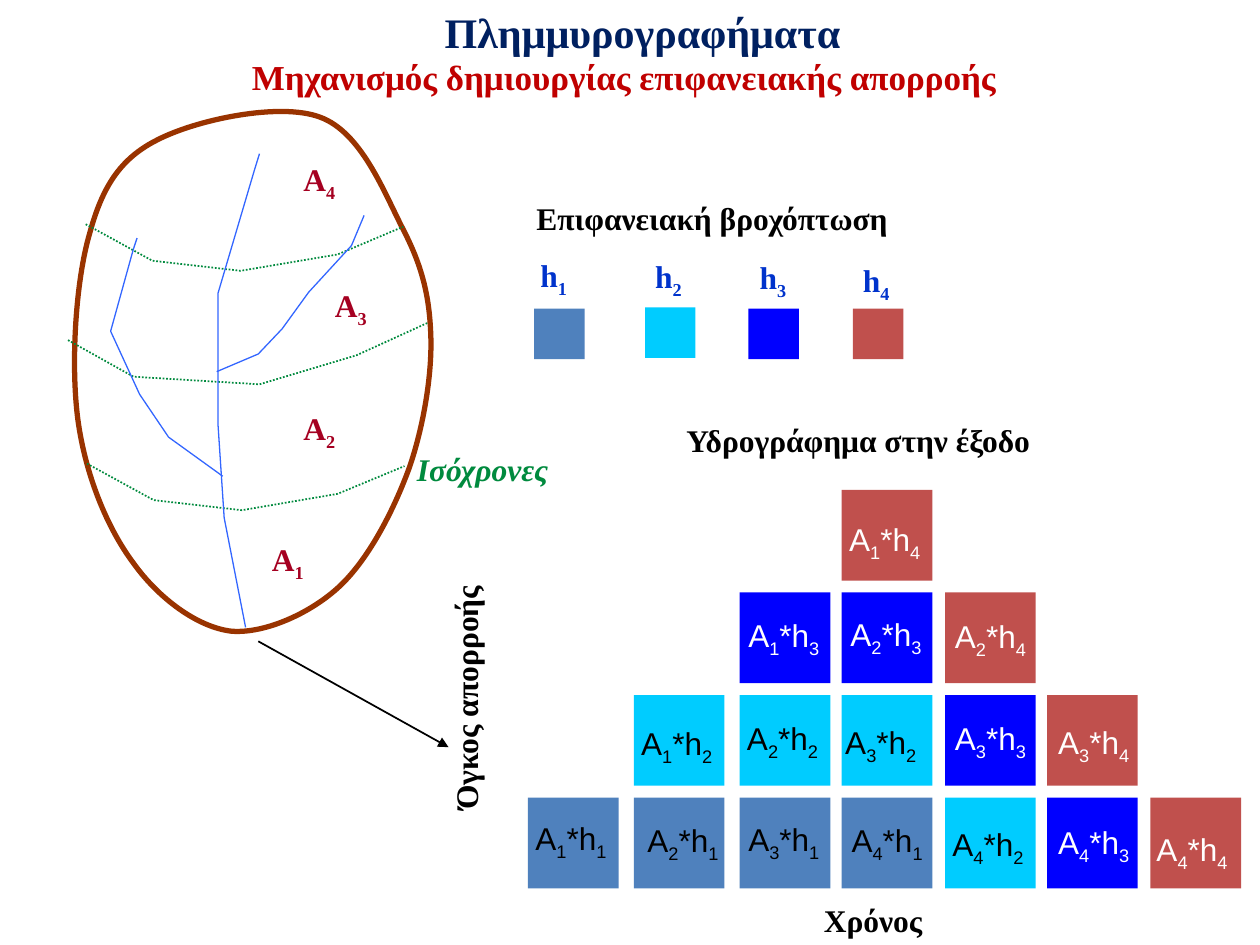
from dataclasses import dataclass
from itertools import groupby
from math import cos, radians, sin

from lxml.etree import SubElement
from pptx import Presentation
from pptx.dml.color import RGBColor
from pptx.enum.dml import MSO_LINE
from pptx.enum.shapes import MSO_CONNECTOR, MSO_SHAPE
from pptx.enum.text import MSO_ANCHOR, MSO_AUTO_SIZE, PP_ALIGN
from pptx.oxml.ns import qn
from pptx.util import Inches, Pt

BLACK = RGBColor(0, 0, 0)
WHITE = RGBColor(255, 255, 255)
STEEL = RGBColor(0x4F, 0x81, 0xBD)
CYAN = RGBColor(0, 0xCC, 0xFF)
BLUE = RGBColor(0, 0, 0xFF)
BRICK = RGBColor(0xC0, 0x50, 0x4D)
BROWN = RGBColor(0x99, 0x33, 0)
GREEN = RGBColor(0, 0x8A, 0x3E)
RIVER = RGBColor(0x33, 0x66, 0xFF)
WINE = RGBColor(0xA5, 0, 0x21)
ROYAL = RGBColor(0, 0x33, 0xCC)
NAVY = RGBColor(0, 0x20, 0x60)
RED = RGBColor(0xC0, 0, 0)
SERIF, SANS = "Times New Roman", "Arial"

WIDE, HIGH = Inches(10), Inches(7.5)
UNIT = WIDE // 1000
TILE, CHIP = 72, 40
COLS = (419, 503, 587, 668, 750, 831, 913)
BASE, STEP = 633, 81.4
RAIN = (STEEL, CYAN, BLUE, BRICK)
INKS = (BLACK, BLACK, WHITE, WHITE)


@dataclass
class Label:
    text: str
    x: float
    y: float
    w: float
    h: float = 40
    ink: RGBColor = BLACK
    face: str = SERIF
    size: int = 18
    bold: bool = True
    slant: bool = False
    turn: float = 0
    subs: bool = False
    wrap: bool = False


@dataclass
class Trace:
    dots: tuple
    ink: RGBColor
    width: float
    dash: bool = False
    curve: bool = False
    turn: float = 0
    hub: tuple = (0, 0)


OUTLINE = Trace((
    (184, 501), (157, 498), (126, 475), (106, 447), (85, 419), (68, 377), (62, 334),
    (56, 290), (60, 224), (71, 186), (81, 149), (95, 126), (125, 111),
    (156, 95), (222, 81), (254, 93), (287, 105), (305, 153), (320, 182),
    (335, 211), (341, 235), (342, 267), (343, 298), (336, 339), (325, 371),
    (313, 404), (294, 441), (272, 463), (250, 485), (212, 503), (184, 501),
), BROWN, 3, curve=True)
TRACES = (
    OUTLINE,
    Trace(((68, 178), (121, 207), (191, 215), (268, 202), (320, 180)), GREEN, 1, True),
    Trace(((54, 270), (106, 299), (206, 305), (283, 282), (340, 256)), GREEN, 1, True),
    Trace(((69, 368), (122, 397), (192, 405), (268, 392), (321, 370)), GREEN, 1, True),
    Trace(((195, 498), (178, 411), (173, 336), (173, 233), (202, 135), (206, 122)),
          RIVER, 0.75),
    Trace(((172, 295), (205, 281), (224, 261), (245, 232), (279, 195), (289, 171)),
          RIVER, 0.75),
    Trace(((177, 378), (134, 347), (111, 313), (88, 263), (106, 198), (109, 189)),
          RIVER, 0.75, turn=335.4, hub=(128, 290)),
)
CELLS = (
    ((415, 645), (499, 570), (584, 484), (664, 408)),
    ((504, 647), (583, 566), (665, 483), (748, 485)),
    ((584, 646), (661, 569), (748, 566), (830, 569)),
    ((666, 647), (746, 650), (830, 648), (908, 654)),
)
AREAS = ((206, 424), (231, 320), (256, 222), (231, 122))
CHIPS = ((424, 245), (512, 244), (594, 245), (677, 245))
DEPTHS = ((419, 198), (510, 199), (593, 200), (675, 202))
TITLES = (
    Label("Χρόνος", 644, 710, 98),
    Label("Όγκος απορροής", 270, 533, 199, turn=270),
    Label("Επιφανειακή βροχόπτωση", 416, 153, 300),
    Label("Υδρογράφημα στην έξοδο", 535, 329, 314, 43),
    Label("Μηχανισμός δημιουργίας επιφανειακής απορροής", 190, 39, 617, 44, RED, size=20),
    Label("Ισόχρονες", 321, 352, 127, ink=GREEN, slant=True),
    Label("Πλημμυρογραφήματα", 32, 0, 956, 50, NAVY, size=24, wrap=True),
)


def grid(*spans: float) -> list[int]:
    return [round(span * UNIT) for span in spans]


def square(shapes, x: float, y: float, side: float, ink: RGBColor) -> None:
    box = shapes.add_shape(MSO_SHAPE.RECTANGLE, *grid(x, y, side, side))
    box.shadow.inherit = False
    box.fill.solid()
    box.fill.fore_color.rgb = ink
    box.line.fill.background()


def write(shapes, label: Label) -> None:
    box = shapes.add_textbox(*grid(label.x, label.y, label.w, label.h))
    box.rotation = label.turn
    frame = box.text_frame
    frame.word_wrap = label.wrap
    frame.auto_size = MSO_AUTO_SIZE.SHAPE_TO_FIT_TEXT
    para = frame.paragraphs[0]
    if label.wrap:
        frame.vertical_anchor = MSO_ANCHOR.MIDDLE
        para.alignment = PP_ALIGN.CENTER
    font = para.font
    font.name, font.size = label.face, Pt(label.size)
    font.bold, font.italic = label.bold, label.slant
    font.color.rgb = label.ink
    for low, part in groupby(label.text, str.isdigit):
        run = para.add_run()
        run.text = "".join(part)
        if low and label.subs:
            run._r.get_or_add_rPr().set("baseline", "-25000")


def spin(dot: tuple, hub: tuple, turn: float) -> tuple:
    x, y = dot[0] - hub[0], dot[1] - hub[1]
    c, s = cos(radians(turn)), sin(radians(turn))
    return hub[0] + x * c - y * s, hub[1] + x * s + y * c


def bend(shape) -> None:
    lines = list(shape._element.iter(qn("a:lnTo")))
    for i in range(0, len(lines), 3):
        lines[i].tag = qn("a:cubicBezTo")
        for line in lines[i + 1:i + 3]:
            lines[i].append(line[0])
            line.getparent().remove(line)


def draw(shapes, trace: Trace) -> None:
    dots = [grid(*spin(dot, trace.hub, -trace.turn)) for dot in trace.dots]
    pen = shapes.build_freeform(*dots[0])
    pen.add_line_segments(dots[1:], close=trace.curve)
    shape = pen.convert_to_shape()
    shape.shadow.inherit = False
    shape.rotation = trace.turn
    shape.fill.background()
    shape.line.color.rgb = trace.ink
    shape.line.width = Pt(trace.width)
    if trace.dash:
        shape.line.dash_style = MSO_LINE.ROUND_DOT
    if trace.curve:
        bend(shape)


def arrow(shapes, *ends: float) -> None:
    link = shapes.add_connector(MSO_CONNECTOR.STRAIGHT, *grid(*ends))
    link.line.color.rgb = BLACK
    link.line.width = Pt(1)
    SubElement(link.line._get_or_add_ln(), qn("a:tailEnd"), type="triangle")
    SubElement(link._element.spPr, qn("a:effectLst"))


def main() -> None:
    deck = Presentation()
    deck.slide_width, deck.slide_height = WIDE, HIGH
    shapes = deck.slides.add_slide(deck.slide_layouts[6]).shapes
    basin = shapes.add_group_shape().shapes
    for trace in TRACES:
        draw(basin, trace)
    for i, (spot, chip, ink) in enumerate(zip(DEPTHS, CHIPS, RAIN), 1):
        square(shapes, *chip, CHIP, ink)
        write(shapes, Label(f"h{i}", *spot, 45, 43, ROYAL, subs=True))
    for i, spot in enumerate(AREAS, 1):
        write(shapes, Label(f"A{i}", *spot, 49, 43, WINE, subs=True))
    for a, spots in enumerate(CELLS):
        for h, spot in enumerate(spots):
            row = min(h, 3 - a)
            square(shapes, COLS[a + h], BASE - STEP * row, TILE, RAIN[h])
            write(shapes, Label(f"A{a + 1}*h{h + 1}", *spot, 79, ink=INKS[h],
                                face=SANS, bold=False, subs=True))
    arrow(shapes, 205, 509, 356, 593)
    for title in TITLES:
        write(shapes, title)
    deck.save("out.pptx")


if __name__ == "__main__":
    main()
